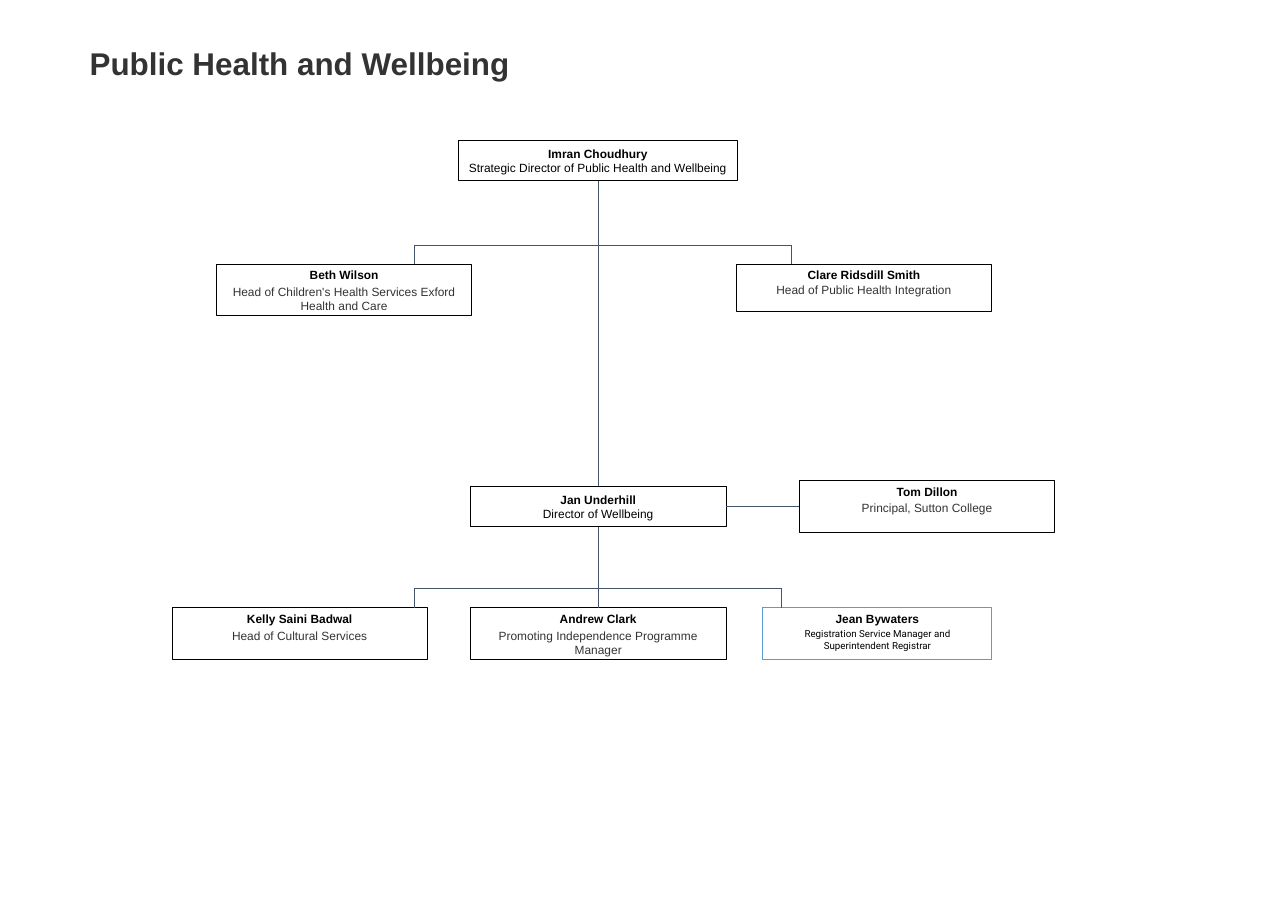
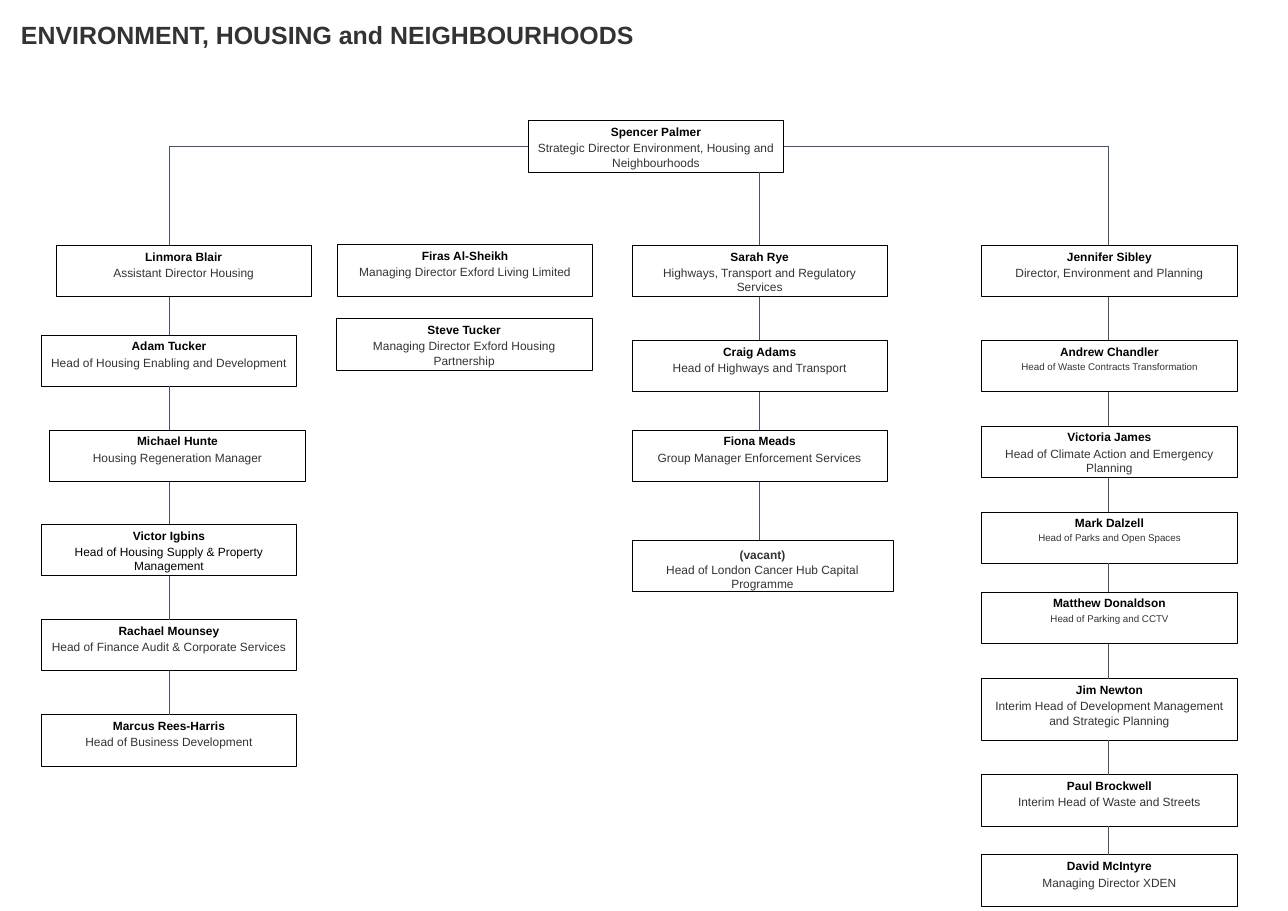
import itertools

import pptx
import pptx.dml.color
import pptx.enum.shapes
import pptx.enum.text
import pptx.oxml.ns
import pptx.util
from lxml import etree

Pt = pptx.util.Pt
ANCHOR = pptx.enum.text.MSO_ANCHOR
ALIGN = pptx.enum.text.PP_ALIGN

# Shared style
PAGE_WIDTH, PAGE_HEIGHT = 1190.16, 841.68
FONT = "Arial"
BLACK, DARK, SLATE, BLUE = "000000", "333333", "44546A", "5B9BD5"
BOX_WIDTH, BOX_HEIGHT = 236, 47.5
LINE_WIDTH = 0.75
SIDE_INSET = 7.2

# Slide 1: boxes as (left, top, name, role, differences from the usual box)
DIRECTOR = {"height": 37.4, "anchor": ANCHOR.MIDDLE, "role_color": BLACK, "gap": 0}
HEALTH_TITLE = {"text": "Public Health and Wellbeing", "size": 29,
                "frame": (75.6, 33.1, 568.8, 37.4), "spacing": 1.0}
HEALTH_BOXES = [
    (424, 129.6, "Imran Choudhury", "Strategic Director of Public Health and Wellbeing",
     {**DIRECTOR, "width": 257}),
    (200, 244, "Beth Wilson", "Head of Children's Health Services Exford Health and Care", {}),
    (680.4, 244, "Clare Ridsdill Smith", "Head of Public Health Integration",
     {"height": 44, "gap": 0}),
    (434.8, 449.3, "Jan Underhill", "Director of Wellbeing", DIRECTOR),
    (738.7, 444.2, "Tom Dillon", "Principal, Sutton College", {}),
    (159, 561.6, "Kelly Saini Badwal", "Head of Cultural Services", {}),
    (434.8, 561.6, "Andrew Clark", "Promoting Independence Programme Manager", {}),
    (704.9, 561.6, "Jean Bywaters",
     "Registration Service Manager and Superintendent Registrar",
     {"width": 211.7, "border": BLUE, "role_color": BLACK, "role_size": 9,
      "role_font": "Roboto"}),
]
HEALTH_PATHS = [
    [(553, 167), (553, 449.3)],
    [(382.7, 244), (382.7, 226.4), (731.5, 226.4), (731.5, 244)],
    [(670.8, 468), (738.7, 468)],
    [(553, 486.7), (553, 561.6)],
    [(382.5, 561.6), (382.5, 543.6), (722.5, 543.6), (722.5, 561.6)],
]

# Slide 2: a director, two separate companies and three reporting columns
HOUSING_TITLE = {"text": "ENVIRONMENT, HOUSING and NEIGHBOURHOODS", "size": 23,
                 "frame": (12.2, 14.4, 628.6, 66.2), "spacing": 0.9}
SMALL_ROLE = {"role_size": 9}
HOUSING_BOXES = [
    (488.2, 111.6, "Spencer Palmer",
     "Strategic Director Environment, Housing and Neighbourhoods", {}),
    (311.8, 226.1, "Firas Al-Sheikh", "Managing Director Exford Living Limited", {}),
    (311, 294.5, "Steve Tucker", "Managing Director Exford Housing Partnership", {}),
]
# Each column: x of its line, then its boxes from top to bottom
HOUSING_COLUMNS = [
    (156.2, [
        (51.8, 226.8, "Linmora Blair", "Assistant Director Housing", {}),
        (38.2, 309.6, "Adam Tucker", "Head of Housing Enabling and Development", {}),
        (46.1, 397.4, "Michael Hunte", "Housing Regeneration Manager", {}),
        (38.2, 484.6, "Victor Igbins", "Head of Housing Supply & Property Management",
         {"role_color": BLACK}),
        (38.2, 572.4, "Rachael Mounsey", "Head of Finance Audit & Corporate Services", {}),
        (38.2, 660.2, "Marcus Rees-Harris", "Head of Business Development", {}),
    ]),
    (702, [
        (584, 226.8, "Sarah Rye", "Highways, Transport and Regulatory Services", {}),
        (584, 314.6, "Craig Adams", "Head of Highways and Transport", {}),
        (584, 397.4, "Fiona Meads", "Group Manager Enforcement Services", {}),
        (584, 499, "(vacant)", "Head of London Cancer Hub Capital Programme",
         {"width": 241.2, "name_color": DARK, "inset": 7.2, "gap": 0}),
    ]),
    (1024.6, [
        (907.2, 226.8, "Jennifer Sibley", "Director, Environment and Planning", {}),
        (907.2, 314.6, "Andrew Chandler", "Head of Waste Contracts Transformation",
         SMALL_ROLE),
        (907.2, 393.8, "Victoria James",
         "Head of Climate Action and Emergency Planning", {}),
        (907.2, 473, "Mark Dalzell", "Head of Parks and Open Spaces", SMALL_ROLE),
        (907.2, 547.2, "Matthew Donaldson", "Head of Parking and CCTV", SMALL_ROLE),
        (907.2, 627.1, "Jim Newton",
         "Interim Head of Development Management and Strategic Planning", {"height": 56.9}),
        (907.2, 715.7, "Paul Brockwell", "Interim Head of Waste and Streets", {}),
        (907.2, 789.8, "David McIntyre", "Managing Director XDEN", {}),
    ]),
]


def color(value):
    return pptx.dml.color.RGBColor.from_string(value)


def format_paragraph(paragraph, size, text_color, bold=False, font_name=FONT):
    for run in paragraph.runs:
        run.font.name = font_name
        run.font.size = Pt(size)
        run.font.bold = bold
        run.font.color.rgb = color(text_color)


def format_frame(text_frame, anchor, vertical_inset):
    text_frame.word_wrap = True
    text_frame.auto_size = pptx.enum.text.MSO_AUTO_SIZE.NONE
    text_frame.vertical_anchor = anchor
    text_frame.margin_left = text_frame.margin_right = Pt(SIDE_INSET)
    text_frame.margin_top = text_frame.margin_bottom = Pt(vertical_inset)


def add_titled_slide(presentation, text, size, frame, spacing):
    slide = presentation.slides.add_slide(presentation.slide_layouts[5])
    title = slide.shapes.title
    title.left, title.top, title.width, title.height = map(Pt, frame)
    title.text_frame.text = text
    format_frame(title.text_frame, ANCHOR.TOP, 7.2)
    paragraph = title.text_frame.paragraphs[0]
    paragraph.alignment = ALIGN.LEFT
    paragraph.line_spacing = spacing
    paragraph.space_before = Pt(0)
    format_paragraph(paragraph, size, DARK, bold=True)
    return slide


def add_box(slide, left, top, name, role, width=BOX_WIDTH, height=BOX_HEIGHT,
            anchor=ANCHOR.TOP, inset=3.6, gap=2, border=BLACK, name_color=BLACK,
            role_color=DARK, role_size=11, role_font=FONT):
    shape = slide.shapes.add_shape(pptx.enum.shapes.MSO_SHAPE.RECTANGLE,
                                   Pt(left), Pt(top), Pt(width), Pt(height))
    shape.shadow.inherit = False
    shape.fill.background()
    shape.line.color.rgb = color(border)
    shape.line.width = Pt(LINE_WIDTH)
    text_frame = shape.text_frame
    text_frame.text = f"{name}\n{role}"
    format_frame(text_frame, anchor, inset)
    name_paragraph, role_paragraph = text_frame.paragraphs
    name_paragraph.alignment = role_paragraph.alignment = ALIGN.CENTER
    role_paragraph.space_before = Pt(gap)
    format_paragraph(name_paragraph, 11, name_color, bold=True)
    format_paragraph(role_paragraph, role_size, role_color, font_name=role_font)


def add_path(slide, points):
    """Join neighbouring points with straight lines."""
    for start, end in itertools.pairwise(points):
        connector = slide.shapes.add_connector(
            pptx.enum.shapes.MSO_CONNECTOR.STRAIGHT, *map(Pt, start + end))
        connector.line.color.rgb = color(SLATE)
        connector.line.width = Pt(LINE_WIDTH)
        etree.SubElement(connector.element.spPr, pptx.oxml.ns.qn("a:effectLst"))


def add_boxes(slide, boxes):
    for left, top, name, role, options in boxes:
        add_box(slide, left, top, name, role, **options)


def add_column(slide, line_x, boxes):
    add_boxes(slide, boxes)
    for upper, lower in itertools.pairwise(boxes):
        bottom = upper[1] + upper[4].get("height", BOX_HEIGHT)
        add_path(slide, [(line_x, bottom), (line_x, lower[1])])


def build_health_slide(presentation):
    slide = add_titled_slide(presentation, **HEALTH_TITLE)
    add_boxes(slide, HEALTH_BOXES)
    for points in HEALTH_PATHS:
        add_path(slide, points)


def build_housing_slide(presentation):
    slide = add_titled_slide(presentation, **HOUSING_TITLE)
    add_boxes(slide, HOUSING_BOXES)
    for line_x, boxes in HOUSING_COLUMNS:
        add_column(slide, line_x, boxes)

    # Lines from the director to the head of each column
    left, top = HOUSING_BOXES[0][:2]
    middle = top + BOX_HEIGHT / 2
    (left_x, _), (center_x, _), (right_x, _) = HOUSING_COLUMNS
    column_top = HOUSING_COLUMNS[0][1][0][1]
    add_path(slide, [(left, middle), (left_x, middle), (left_x, column_top)])
    add_path(slide, [(center_x, top + BOX_HEIGHT), (center_x, column_top)])
    add_path(slide, [(left + BOX_WIDTH, middle), (right_x, middle), (right_x, column_top)])


def main():
    presentation = pptx.Presentation()
    presentation.slide_width = Pt(PAGE_WIDTH)
    presentation.slide_height = Pt(PAGE_HEIGHT)
    build_health_slide(presentation)
    build_housing_slide(presentation)
    presentation.save("out.pptx")


if __name__ == "__main__":
    main()
